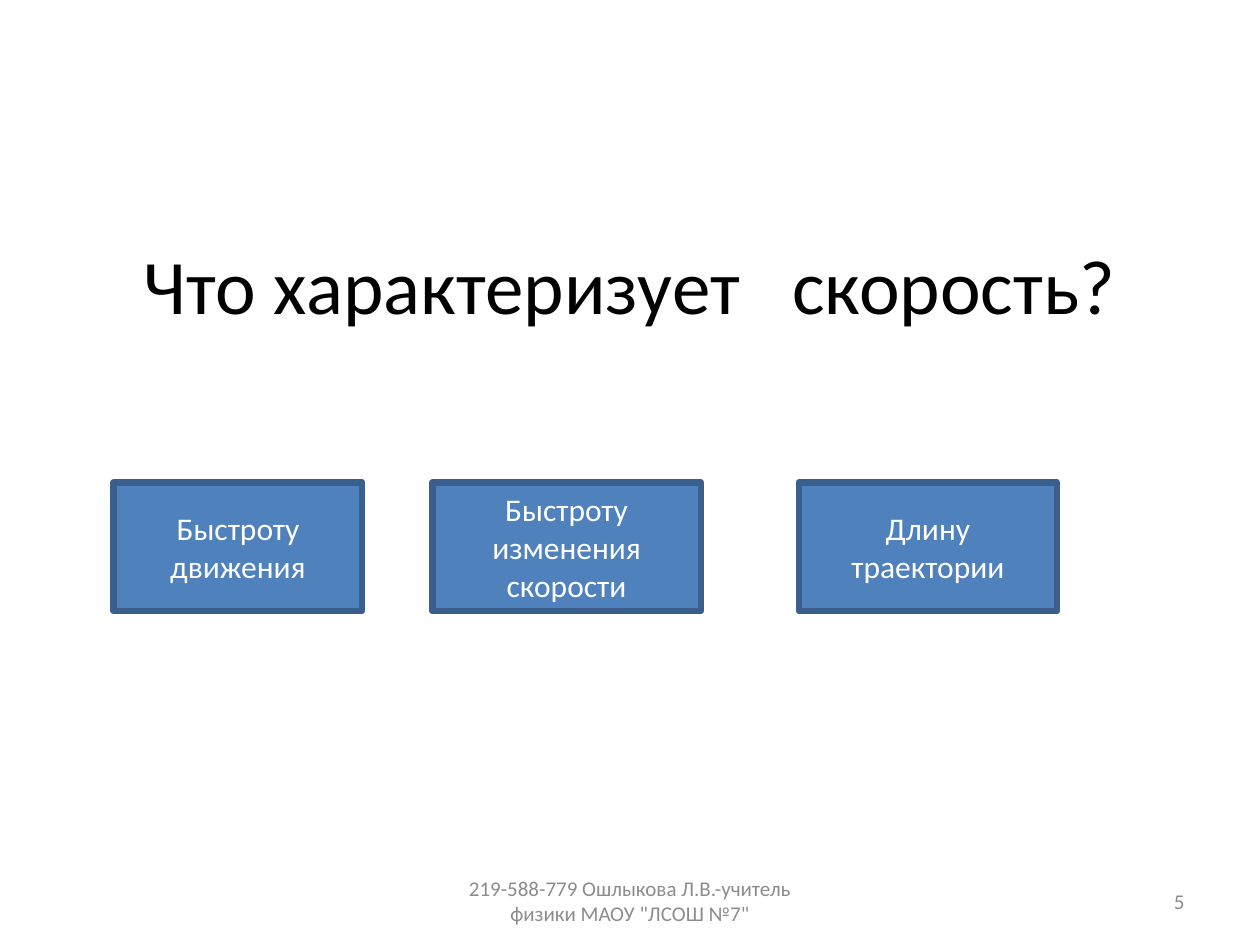
from pptx import Presentation
from pptx.dml.color import RGBColor
from pptx.enum.shapes import MSO_SHAPE
from pptx.enum.text import MSO_ANCHOR, PP_ALIGN
from pptx.util import Pt

RECT = MSO_SHAPE.RECTANGLE
MIDDLE = MSO_ANCHOR.MIDDLE
CENTER, RIGHT = PP_ALIGN.CENTER, PP_ALIGN.RIGHT


def color(value):
    return RGBColor.from_string(value)


class QuizSlide:
    """Holds the quiz style and the slide being filled."""

    font = "Calibri"
    ink, muted, on_fill = "000000", "8C8C8C", "FFFFFF"
    fill, border = "4F81BD", "3A5F8C"

    def __init__(self, prs):
        self.s = prs.slides.add_slide(prs.slide_layouts[6])

    def set_text(self, sp, text, size, ink, align):
        tf = sp.text_frame
        tf.word_wrap = True
        tf.vertical_anchor = MIDDLE
        p = tf.paragraphs[0]
        p.text = text
        p.alignment = align
        p.font.name = self.font
        p.font.size = Pt(size)
        p.font.color.rgb = color(ink)
        return tf

    def text(self, box, text, size, ink, align=CENTER):
        sp = self.s.shapes.add_textbox(*map(Pt, box))
        return self.set_text(sp, text, size, ink, align)

    def title(self, box, text, bottom):
        tf = self.text(box, text, 44, self.ink)
        tf.margin_bottom = Pt(bottom)

    def footer(self, box, text, align=CENTER):
        self.text(box, text, 12, self.muted, align)

    def answer(self, box, text):
        sp = self.s.shapes.add_shape(RECT, *map(Pt, box))
        sp.shadow.inherit = False
        sp.fill.solid()
        sp.fill.fore_color.rgb = color(self.fill)
        sp.line.color.rgb = color(self.border)
        sp.line.width = Pt(3.78)
        self.set_text(sp, text, 18, self.on_fill, CENTER)


def main():
    prs = Presentation()
    prs.slide_width, prs.slide_height = Pt(720), Pt(540)
    quiz = QuizSlide(prs)

    quiz.title((54, 94.5, 612, 189), "Что характеризует   скорость?", bottom=57)

    answers = [
        (65, 142, "Быстроту движения"),
        (247, 153.5, "Быстроту изменения скорости"),
        (456.5, 147.5, "Длину траектории"),
    ]
    for left, width, text in answers:
        quiz.answer((left, 275.7, width, 73.5), text)

    quiz.footer((516, 500.5, 168, 28.75), "5", RIGHT)
    quiz.footer((246, 500.5, 228, 28.75),
                '219-588-779 Ошлыкова Л.В.-учитель физики МАОУ "ЛСОШ №7"')

    prs.save("out.pptx")


if __name__ == "__main__":
    main()
